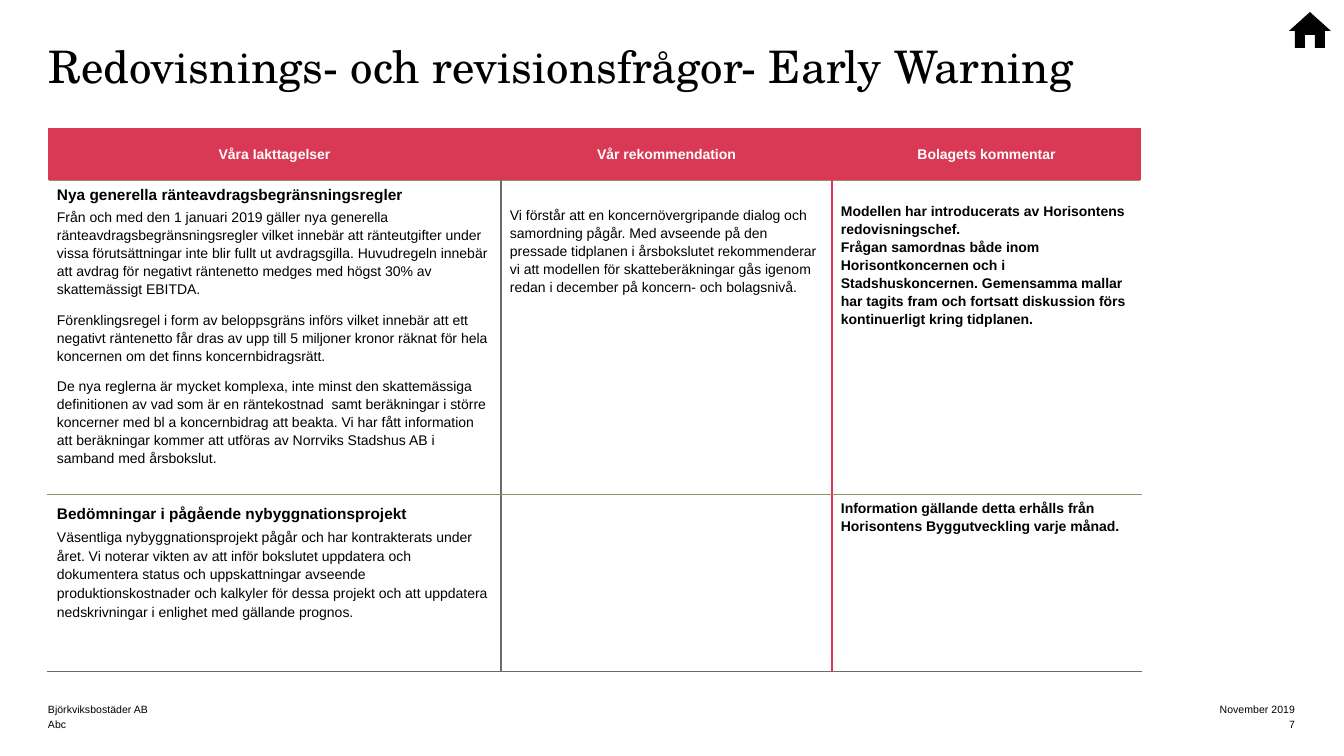
from itertools import accumulate

from lxml import etree
from pptx import Presentation
from pptx import util as u
from pptx.dml.color import RGBColor
from pptx.enum import text
from pptx.oxml import ns

PX = 914400 / 100.8
COLORS = {"red": "D93954", "olive": "968C6D", "grey": "6B6B6B", "white": "FFFFFF", "black": "000000"}
HEADINGS = ["Våra Iakttagelser", "Vår rekommendation", "Bolagets kommentar"]
COLUMNS, ROWS = [453, 331, 309], [52, 315, 177]
NO_STYLE = "{2D5ABB26-0587-4C30-8999-92F81FD0307C}"

# Each paragraph: wording, size, bold, line spacing, space before.
INTEREST = [
    ("Nya generella ränteavdragsbegränsningsregler", 11, True, 1.15, 0),
    ("Från och med den 1 januari 2019 gäller nya generella ränteavdragsbegränsningsregler "
     "vilket innebär att ränteutgifter under vissa förutsättningar inte blir fullt ut avdragsgilla. "
     "Huvudregeln innebär att avdrag för negativt räntenetto medges med högst 30% av "
     "skattemässigt EBITDA.", 10, False, 1.15, 3),
    ("Förenklingsregel i form av beloppsgräns införs vilket innebär att ett negativt räntenetto "
     "får dras av upp till 5 miljoner kronor räknat för hela koncernen om det finns "
     "koncernbidragsrätt.", 10, False, 1.15, 9),
    ("De nya reglerna är mycket komplexa, inte minst den skattemässiga definitionen av vad som är "
     "en räntekostnad  samt beräkningar i större koncerner med bl a koncernbidrag att beakta. "
     "Vi har fått information att beräkningar kommer att utföras av Norrviks Stadshus AB i samband "
     "med årsbokslut.", 10, False, 1.15, 9),
]
ADVICE = [
    ("Vi förstår att en koncernövergripande dialog och samordning pågår. Med avseende på den "
     "pressade tidplanen i årsbokslutet rekommenderar vi att modellen för skatteberäkningar gås "
     "igenom redan i december på koncern- och bolagsnivå.", 10, False, 1.15, 0),
]
COMMENT = [
    ("Modellen har introducerats av Horisontens redovisningschef.", 10, True, 1.15, 0),
    ("Frågan samordnas både inom Horisontkoncernen och i Stadshuskoncernen. Gemensamma mallar "
     "har tagits fram och fortsatt diskussion förs kontinuerligt kring tidplanen.",
     10, True, 1.15, 0),
]
PROJECTS = [
    ("Bedömningar i pågående nybyggnationsprojekt", 11, True, 1.38, 0),
    ("Väsentliga nybyggnationsprojekt pågår och har kontrakterats under året. Vi noterar vikten av "
     "att inför bokslutet uppdatera och dokumentera status och uppskattningar avseende "
     "produktionskostnader och kalkyler för dessa projekt och att uppdatera nedskrivningar i "
     "enlighet med gällande prognos.", 10, False, 1.2, 3),
]
PROJECT_COMMENT = [
    ("Information gällande detta erhålls från Horisontens Byggutveckling varje månad.",
     10, True, 1.15, 0),
]
BODY = [[(INTEREST, 4), (ADVICE, 26), (COMMENT, 22)],
        [(PROJECTS, 4), ([], 4), (PROJECT_COMMENT, 4)]]


def px(length):
    """Turn px into EMU."""
    return u.Emu(round(length * PX))


def rgb(name):
    """Look up a named colour."""
    return RGBColor.from_string(COLORS[name])


def add_span(para, wording, size, bold=False, color="black", font="Arial"):
    """Add one formatted run to a paragraph."""
    span = para.add_run()
    span.text = wording
    span.font.size, span.font.bold, span.font.name = u.Pt(size), bold, font
    span.font.color.rgb = rgb(color)


def set_margins(frame, side=0, top=0):
    """Set the inner margins of a frame or cell."""
    frame.margin_left = frame.margin_right = px(side)
    frame.margin_top, frame.margin_bottom = px(top), 0


def fill_title(title, left, top, width, height):
    """Place and format the title."""
    title.left, title.top, title.width, title.height = map(px, (left, top, width, height))
    frame = title.text_frame
    frame.auto_size, frame.word_wrap = text.MSO_AUTO_SIZE.NONE, True
    frame.vertical_anchor = text.MSO_ANCHOR.TOP
    set_margins(frame)
    para = frame.paragraphs[0]
    para.alignment, para.line_spacing = text.PP_ALIGN.LEFT, 0.85
    add_span(para, "Redovisnings- och revisionsfrågor- Early Warning", 32, font="TeX Gyre Schola")


def set_borders(cell, borders):
    """Draw the cell borders, given as (side, colour, points) in schema order."""
    properties = cell._tc.get_or_add_tcPr()
    for index, (side, color, points) in enumerate(borders):
        line = etree.Element(ns.qn(f"a:ln{side}"), w=str(u.Pt(points)))
        fill = etree.SubElement(line, ns.qn("a:solidFill"))
        etree.SubElement(fill, ns.qn("a:srgbClr"), val=COLORS[color])
        properties.insert(index, line)


def fill_heading(cell, wording):
    """Write a heading cell."""
    cell.fill.solid()
    cell.fill.fore_color.rgb = rgb("red")
    cell.vertical_anchor = text.MSO_ANCHOR.MIDDLE
    set_margins(cell, 9)
    para = cell.text_frame.paragraphs[0]
    para.alignment, para.line_spacing = text.PP_ALIGN.CENTER, 1.07
    add_span(para, wording, 10, True, "white")


def fill_body(cell, paragraphs, top):
    """Write the paragraphs of a body cell."""
    cell.fill.background()
    set_margins(cell, 9, top)
    frame = cell.text_frame
    for index, (wording, size, bold, spacing, before) in enumerate(paragraphs):
        para = frame.add_paragraph() if index else frame.paragraphs[0]
        para.line_spacing, para.space_before = spacing, u.Pt(before)
        add_span(para, wording, size, bold)


def add_findings(page, left, top):
    """Add the table of findings."""
    size = sum(COLUMNS), sum(ROWS)
    table = page.shapes.add_table(3, 3, *map(px, (left, top, *size))).table
    table.horz_banding = False
    table._tbl.tblPr.find(ns.qn("a:tableStyleId")).text = NO_STYLE
    for column, width in zip(table.columns, COLUMNS):
        column.width = px(width)
    for row, height in zip(table.rows, ROWS):
        row.height = px(height)
    for index, heading in enumerate(HEADINGS):
        fill_heading(table.cell(0, index), heading)
    verticals = ["white", "grey", "red", "white"]
    horizontals = ["olive", "olive", "grey"]
    for row, cells in enumerate(BODY):
        for column, (paragraphs, margin) in enumerate(cells):
            cell = table.cell(row + 1, column)
            fill_body(cell, paragraphs, margin)
            set_borders(cell, [("L", verticals[column], 1), ("R", verticals[column + 1], 1),
                               ("T", horizontals[row], 0.75), ("B", horizontals[row + 1], 0.75)])


def add_footer(page, left, top, width, lines, alignment):
    """Add stacked footer lines."""
    for index, wording in enumerate(lines):
        box = page.shapes.add_textbox(*map(px, (left, top + 15 * index, width, 15)))
        frame = box.text_frame
        frame.word_wrap, frame.vertical_anchor = True, text.MSO_ANCHOR.BOTTOM
        set_margins(frame)
        frame.paragraphs[0].alignment = alignment
        add_span(frame.paragraphs[0], wording, 7.5)


def add_home(page, left, top, width, height):
    """Add the house symbol, mirrored about its middle."""
    half = [(0, 0), (21, 19), (15, 19), (15, height), (5, height), (5, 23)]
    middle = left + width / 2
    points = [(middle + x, top + y) for x, y in half]
    points += [(middle - x, top + y) for x, y in reversed(half[1:])]
    builder = page.shapes.build_freeform(*points[0], scale=PX)
    builder.add_line_segments(points[1:])
    house = builder.convert_to_shape()
    house.shadow.inherit = False
    house.fill.solid()
    house.fill.fore_color.rgb = rgb("black")
    house.line.fill.background()


def main():
    """Build and save the deck."""
    deck = Presentation()
    deck.slide_width, deck.slide_height = px(1344), px(756)
    page = deck.slides.add_slide(deck.slide_layouts[5])
    fill_title(page.shapes.title, 48, 47, 1203, 117)
    add_findings(page, 48, 128)
    add_footer(page, 48, 701, 604, ["Björkviksbostäder AB", "Abc"], text.PP_ALIGN.LEFT)
    add_footer(page, 906, 701, 389, ["November 2019", "7"], text.PP_ALIGN.RIGHT)
    add_home(page, 1289, 12, 42, 36)
    deck.save("out.pptx")


if __name__ == "__main__":
    main()
